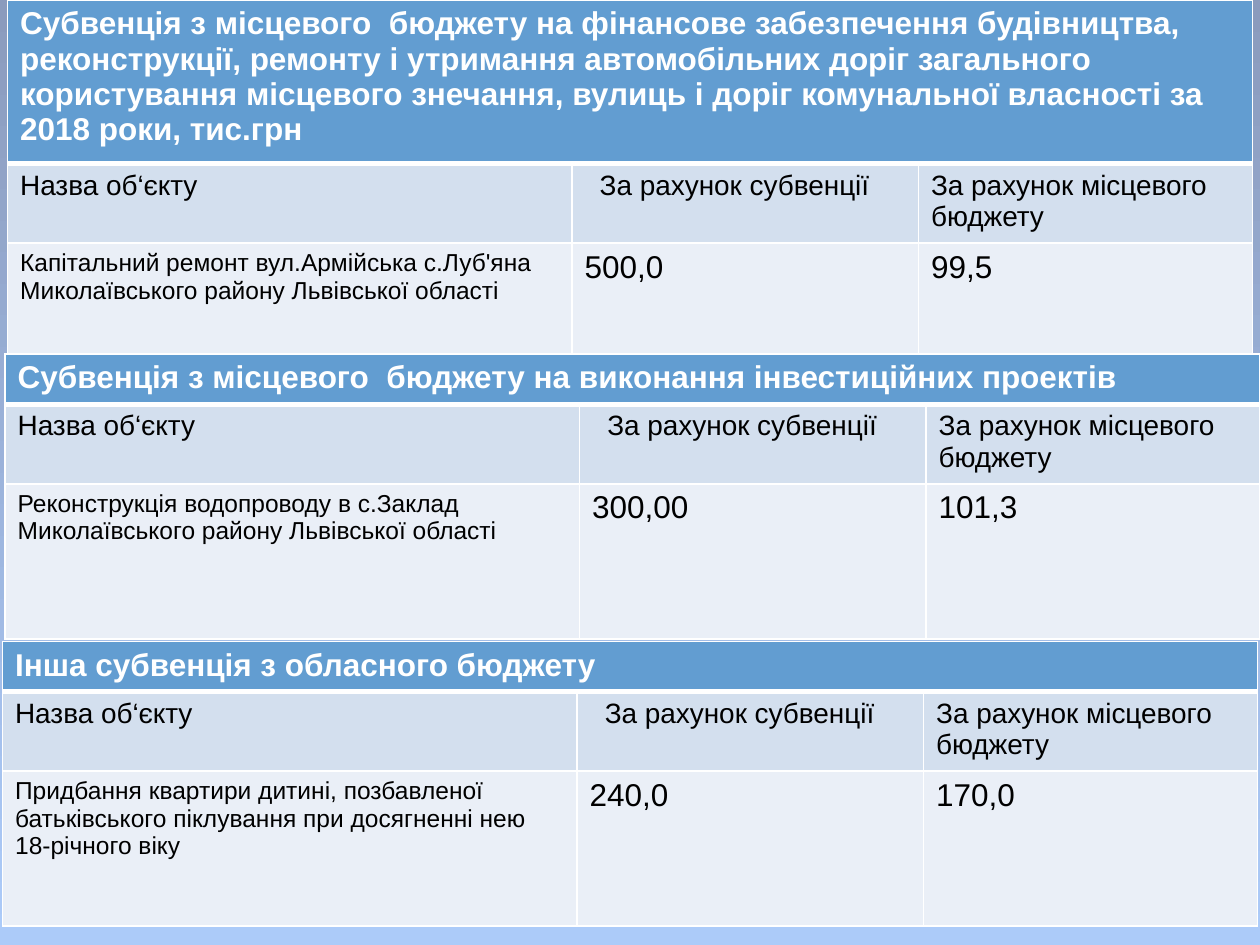
import pptx
import pptx.util
import pptx.dml.color
import pptx.oxml.ns
from lxml import etree

Inches, Pt = pptx.util.Inches, pptx.util.Pt

COLUMN_TITLES = ["Назва об‘єкту", "За рахунок субвенції", "За рахунок місцевого бюджету"]
SUBVENTIONS = [
    {
        "title": "Субвенція з місцевого  бюджету на фінансове забезпечення будівництва, "
                 "реконструкції, ремонту і утримання автомобільних доріг загального "
                 "користування місцевого знечання, вулиць і доріг комунальної власності "
                 "за 2018 роки, тис.грн",
        "project": ["Капітальний ремонт вул.Армійська с.Луб'яна Миколаївського району "
                    "Львівської області", "500,0", "99,5"],
        "corner": (0.06, 0), "columns": (4.48, 2.75, 2.65), "rows": (1.3, 0.63, 0.95),
    },
    {
        "title": "Субвенція з місцевого  бюджету на виконання інвестиційних проектів",
        "project": ["Реконструкція водопроводу в с.Заклад Миколаївського району "
                    "Львівської області", "300,00", "101,3"],
        "corner": (0.04, 2.81), "columns": (4.56, 2.75, 2.65), "rows": (0.4, 0.63, 1.23),
    },
    {
        "title": "Інша субвенція з обласного бюджету",
        "project": ["Придбання квартири дитині, позбавленої батьківського піклування "
                    "при досягненні нею 18-річного віку", "240,0", "170,0"],
        "corner": (0.02, 5.09), "columns": (4.56, 2.75, 2.65), "rows": (0.4, 0.63, 1.23),
    },
]
ROW_FILLS = ["629DD1", "D3DFEE", "EAEFF7"]
BACKDROP = ["8B9BBD", "ACCBF9"]
TITLE_INDENT = 0.22


def color(value):
    return pptx.dml.color.RGBColor.from_string(value)


def write(cell, text, size=16, bold=False, ink="000000", indent=0.1):
    cell.margin_left = Inches(indent)
    run = cell.text_frame.paragraphs[0].add_run()
    run.text = text
    run.font.name = "Arial"
    run.font.size = Pt(size)
    run.font.bold = bold
    run.font.color.rgb = color(ink)


def add_border(cell, side, width):
    qn = pptx.oxml.ns.qn
    properties = cell._tc.get_or_add_tcPr()
    line = etree.SubElement(properties, qn(f"a:ln{side}"), w=str(Pt(width)))
    fill = etree.SubElement(line, qn("a:solidFill"))
    etree.SubElement(fill, qn("a:srgbClr"), val="FFFFFF")


def style_cells(table):
    for row_index, row in enumerate(table.rows):
        widths = {"L": 1, "R": 1, "T": 3 if row_index == 1 else 1,
                  "B": 3 if row_index == 0 else 1}
        for cell in row.cells:
            for side, width in widths.items():
                add_border(cell, side, width)
            cell.fill.solid()
            cell.fill.fore_color.rgb = color(ROW_FILLS[row_index])


def add_subvention(slide, subvention):
    columns, rows = subvention["columns"], subvention["rows"]
    left, top = subvention["corner"]
    table = slide.shapes.add_table(
        len(rows), len(columns), Inches(left), Inches(top),
        Inches(sum(columns)), Inches(sum(rows))).table
    table.horz_banding = False
    for column, width in zip(table.columns, columns):
        column.width = Inches(width)
    for row, height in zip(table.rows, rows):
        row.height = Inches(height)
    style_cells(table)

    heading = table.cell(0, 0)
    heading.merge(table.cell(0, len(columns) - 1))
    write(heading, subvention["title"], size=18, bold=True, ink="FFFFFF")
    for index, (title, value) in enumerate(zip(COLUMN_TITLES, subvention["project"])):
        write(table.cell(1, index), title, indent=TITLE_INDENT if index == 1 else 0.1)
        write(table.cell(2, index), value, size=14 if index == 0 else 18)


def main():
    deck = pptx.Presentation()
    deck.slide_width, deck.slide_height = Inches(10), Inches(7.5)
    slide = deck.slides.add_slide(deck.slide_layouts[6])
    backdrop = slide.background.fill
    backdrop.gradient()
    backdrop.gradient_angle = 270
    for stop, shade in zip(backdrop.gradient_stops, BACKDROP):
        stop.color.rgb = color(shade)
    for subvention in SUBVENTIONS:
        add_subvention(slide, subvention)
    deck.save("out.pptx")


if __name__ == "__main__":
    main()
